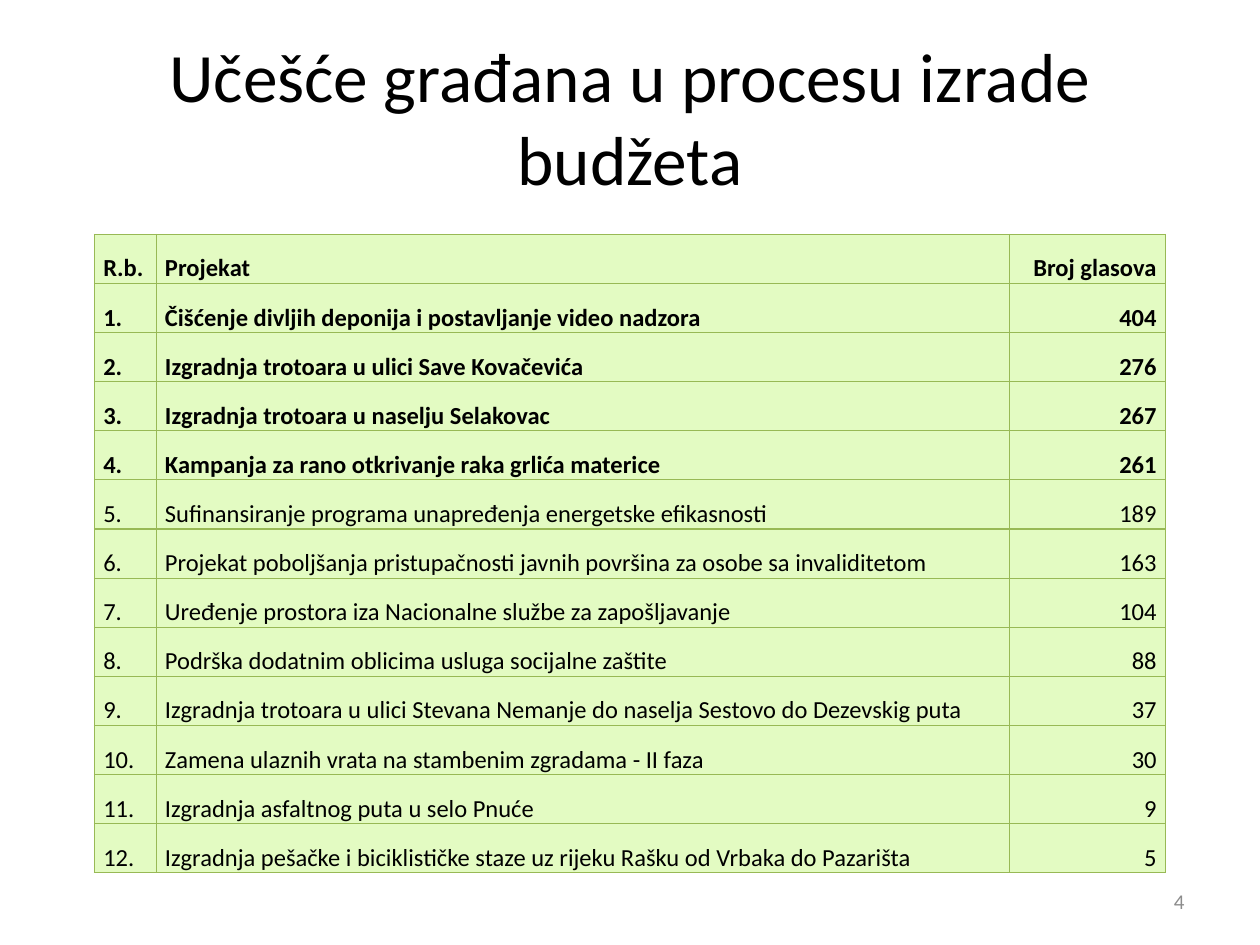
"""Build a slide with a table of citizens' votes on budget projects."""
from lxml.etree import SubElement as Sub
from pptx import Presentation
from pptx.dml.color import RGBColor as Rgb
from pptx.enum.text import MSO_ANCHOR as Anchor, PP_ALIGN as Align
from pptx.oxml.ns import qn
from pptx.util import Inches, Pt

INK, GREY, LINE, MINT = "000000", "8C8C8C", "98B955", "E3FBC2"
ROWS = [
    ("R.b.", "Projekat", "Broj glasova"),
    ("1.", "Čišćenje divljih deponija i postavljanje video nadzora", "404"),
    ("2.", "Izgradnja trotoara u ulici Save Kovačevića", "276"),
    ("3.", "Izgradnja trotoara u naselju Selakovac", "267"),
    ("4.", "Kampanja za rano otkrivanje raka grlića materice", "261"),
    ("5.", "Sufinansiranje programa unapređenja energetske efikasnosti", "189"),
    ("6.", "Projekat poboljšanja pristupačnosti javnih površina za osobe sa invaliditetom", "163"),
    ("7.", "Uređenje prostora iza Nacionalne službe za zapošljavanje", "104"),
    ("8.", "Podrška dodatnim oblicima usluga socijalne zaštite", "88"),
    ("9.", "Izgradnja trotoara u ulici Stevana Nemanje do naselja Sestovo do Dezevskig puta", "37"),
    ("10.", "Zamena ulaznih vrata na stambenim zgradama - II faza", "30"),
    ("11.", "Izgradnja asfaltnog puta u selo Pnuće", "9"),
    ("12.", "Izgradnja pešačke i biciklističke staze uz rijeku Rašku od Vrbaka do Pazarišta", "5"),
]
BOLD = 5
WIDE = (0.49, 6.77, 1.24)
HIGH = 0.39


def write(frame, text, size, tint, align, bold=False, space=None):
    para = frame.paragraphs[0]
    para.alignment = align
    para.line_spacing = space
    run = para.add_run()
    run.text = text
    look = {"name": "Calibri", "size": Pt(size), "bold": bold}
    for key, value in look.items():
        setattr(run.font, key, value)
    run.font.color.rgb = Rgb.from_string(tint)


deck = Presentation()
deck.slide_width, deck.slide_height = Inches(10), Inches(7.5)
slide = deck.slides.add_slide(deck.slide_layouts[6])

notes = [
    ("Učešće građana u procesu izrade budžeta", (0.5, 0.3, 9, 1.25), 39.6, INK, Align.CENTER),
    ("4", (7.17, 6.95, 2.33, 0.4), 12, GREY, Align.RIGHT),
]
for text, place, size, tint, align in notes:
    frame = slide.shapes.add_textbox(*map(Inches, place)).text_frame
    frame.word_wrap = True
    frame.vertical_anchor = Anchor.MIDDLE
    write(frame, text, size, tint, align)

area = map(Inches, (0.75, 1.86, sum(WIDE), HIGH * len(ROWS)))
table = slide.shapes.add_table(len(ROWS), len(WIDE), *area).table
for col, wide in zip(table.columns, WIDE):
    col.width = Inches(wide)

pad = {
    "margin_left": Inches(0.07), "margin_right": Inches(0.07),
    "margin_top": 0, "margin_bottom": 0, "vertical_anchor": Anchor.BOTTOM,
}
for r, row in enumerate(ROWS):
    table.rows[r].height = Inches(HIGH)
    for c, text in enumerate(row):
        cell = table.cell(r, c)
        for key, value in pad.items():
            setattr(cell, key, value)
        props = cell._tc.get_or_add_tcPr()
        for side in ("lnL", "lnR", "lnT", "lnB"):
            edge = Sub(props, qn("a:" + side), w=str(Pt(0.75)))
            Sub(Sub(edge, qn("a:solidFill")), qn("a:srgbClr"), val=LINE)
        cell.fill.solid()
        cell.fill.fore_color.rgb = Rgb.from_string(MINT)
        align = Align.RIGHT if c == 2 else Align.LEFT
        write(cell.text_frame, text, 14, INK, align, r < BOLD, 1.07)

deck.save("out.pptx")
